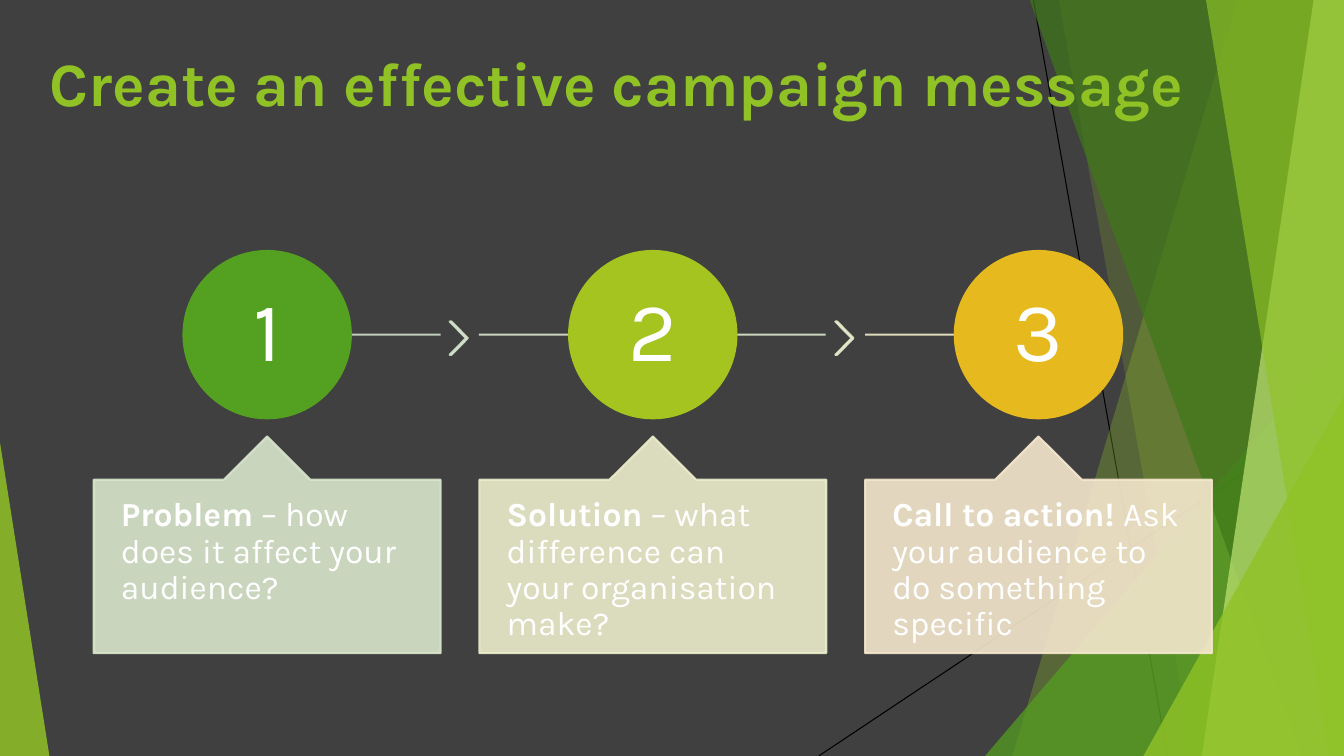
from dataclasses import dataclass

from lxml.etree import SubElement
from pptx import Presentation
from pptx.dml.color import RGBColor
from pptx.enum.shapes import MSO_CONNECTOR as Connector
from pptx.enum.shapes import MSO_SHAPE as Preset
from pptx.enum.text import MSO_ANCHOR as Anchor
from pptx.enum.text import MSO_AUTO_SIZE as AutoSize
from pptx.enum.text import PP_ALIGN as Align
from pptx.oxml.ns import qn
from pptx.util import Inches, Pt

FONT = "Karla"
COLORS = {
    "background": "404040", "black": "000000", "white": "FFFFFF",
    "lime": "90C226", "green": "54A021", "dark green": "3F7819", "pale lime": "C0E474",
    "olive": "A5C41F", "gold": "E6B91E",
    "line 1": "D1DFCD", "chevron 1": "D4E3CC", "callout 1": "D9E6CC",
    "line 2": "DEE9CC", "chevron 2": "E5ECCB", "callout 2": "ECEECC",
    "line 3": "F1EECC", "callout 3": "F5E7CD",
}
TOP, BOTTOM, RIGHT = -0.01, 7.5, 13.33
STEP_PITCH = 3.825
STEP_OPACITY = 90


@dataclass
class Facet:
    """A panel reaching the right edge, with a slanted left side."""
    top_left: float
    bottom_left: float
    color: str
    opacity: int


@dataclass
class Corner:
    """A right triangle standing on the bottom edge; apex 0 is left, 1 is right."""
    left: float
    top: float
    width: float
    apex: int
    color: str
    opacity: int


@dataclass
class Step:
    heading: str
    text: str
    color: str
    line_start: float
    line_end: float


DECORATION = [
    Facet(12.28, 10.04, "lime", 30),
    Facet(10.5, 11.83, "lime", 20),
    Corner(9.77, 3.33, 3.56, 1, "green", 72),
    Facet(10.21, 12.91, "dark green", 70),
    Facet(13.03, 11.92, "pale lime", 70),
    Facet(11.96, 13.18, "lime", 65),
    Corner(11.34, 3.93, 1.99, 1, "lime", 80),
    Corner(0, 4.39, 0.49, 0, "lime", 85),
]
STEPS = [
    Step("Problem", " – how does it affect your audience?", "green", 2.84, 4.37),
    Step("Solution", " – what difference can your organisation make?", "olive", 4.75, 8.19),
    Step("Call to action! ", "Ask your audience to do something specific", "gold", 8.58, 10.3),
]


def rgb(name: str) -> RGBColor:
    return RGBColor.from_string(COLORS[name])


def set_opacity(shape, percent: int) -> None:
    """Apply one opacity to both the fill and the line of a shape."""
    for color in list(shape.element.spPr.iter(qn("a:srgbClr"))):
        SubElement(color, qn("a:alpha"), val=str(percent * 1000))


def paint(shape, color: str, opacity: int = 100, outlined: bool = True) -> None:
    shape.shadow.inherit = False
    shape.fill.solid()
    shape.fill.fore_color.rgb = rgb(color)
    if outlined:
        shape.line.color.rgb = rgb(color)
        shape.line.width = Pt(1.5)
    else:
        shape.line.fill.background()
    if opacity < 100:
        set_opacity(shape, opacity)


def add_preset(slide, preset, left: float, top: float, width: float, height: float, *adjustments: float):
    shape = slide.shapes.add_shape(preset, Inches(left), Inches(top), Inches(width), Inches(height))
    for index, value in enumerate(adjustments):
        shape.adjustments[index] = value
    return shape


def add_line(slide, start: tuple, end: tuple, color: str, width: float, opacity: int = 100) -> None:
    line = slide.shapes.add_connector(Connector.STRAIGHT, *(Inches(value) for value in start + end))
    line.line.color.rgb = rgb(color)
    line.line.width = Pt(width)
    SubElement(line.element.spPr, qn("a:effectLst"))
    if opacity < 100:
        set_opacity(line, opacity)


def add_facet(slide, facet: Facet) -> None:
    builder = slide.shapes.build_freeform(Inches(facet.top_left), Inches(TOP))
    corners = [(RIGHT, TOP), (RIGHT, BOTTOM), (facet.bottom_left, BOTTOM)]
    builder.add_line_segments([(Inches(x), Inches(y)) for x, y in corners], close=True)
    paint(builder.convert_to_shape(), facet.color, facet.opacity, outlined=False)


def add_corner(slide, corner: Corner) -> None:
    shape = add_preset(slide, Preset.ISOSCELES_TRIANGLE, corner.left, corner.top,
                       corner.width, BOTTOM - corner.top, corner.apex)
    paint(shape, corner.color, corner.opacity, outlined=False)


def write(shape, texts: list, size: int, align, anchor, inset_x: float, inset_y: float):
    """Write one paragraph, one run per text, and return the paragraph."""
    frame = shape.text_frame
    frame.word_wrap = True
    frame.auto_size = AutoSize.NONE
    frame.vertical_anchor = anchor
    frame.margin_left = frame.margin_right = Inches(inset_x)
    frame.margin_top = frame.margin_bottom = Inches(inset_y)
    para = frame.paragraphs[0]
    para.alignment = align
    para.font.name = FONT
    para.font.size = Pt(size)
    para.font.color.rgb = rgb("white")
    for text in texts:
        para.add_run().text = text
    return para


def add_title(slide, text: str) -> None:
    title = slide.shapes.title
    title.left, title.top, title.width, title.height = map(Inches, (0.39, 0.4, 11.51, 1.45))
    para = write(title, [text], 44, Align.LEFT, Anchor.TOP, 0.1, 0.05)
    para.font.bold = True
    para.font.color.rgb = rgb("lime")
    title.element.getparent().append(title.element)  # in front of the decoration


def add_step(slide, number: int, step: Step) -> None:
    offset = (number - 1) * STEP_PITCH
    add_line(slide, (step.line_start, 3.32), (step.line_end, 3.32),
             f"line {number}", 1.5, STEP_OPACITY)
    if number < len(STEPS):
        chevron = add_preset(slide, Preset.CHEVRON, 4.46 + offset, 3.19, 0.18, 0.33, 0.9)
        paint(chevron, f"chevron {number}", STEP_OPACITY)

    circle = add_preset(slide, Preset.OVAL, 1.82 + offset, 2.49, 1.66, 1.66)
    paint(circle, step.color)
    write(circle, [str(number)], 60, Align.CENTER, Anchor.MIDDLE, 0.06, 0.06).line_spacing = 0.9

    callout = add_preset(slide, Preset.UP_ARROW_CALLOUT, 0.93 + offset, 4.33, 3.44, 2.15,
                         0.5, 0.2, 0.2, 0.8)
    paint(callout, f"callout {number}", STEP_OPACITY)
    para = write(callout, [step.heading, step.text], 24, Align.LEFT, Anchor.TOP, 0.27, 0.18)
    para.line_spacing = 0.9
    para.runs[0].font.bold = True


def main() -> None:
    deck = Presentation()
    deck.slide_width, deck.slide_height = Inches(13.33), Inches(7.5)
    slide = deck.slides.add_slide(deck.slide_layouts.get_by_name("Title Only"))
    slide.background.fill.solid()
    slide.background.fill.fore_color.rgb = rgb("background")

    add_line(slide, (10.25, 0), (11.58, BOTTOM), "black", 0.75)
    add_line(slide, (RIGHT, 4.03), (8.12, BOTTOM), "black", 0.75)
    for item in DECORATION:
        if isinstance(item, Facet):
            add_facet(slide, item)
        else:
            add_corner(slide, item)
    add_title(slide, "Create an effective campaign message")
    for number, step in enumerate(STEPS, start=1):
        add_step(slide, number, step)
    deck.save("out.pptx")


if __name__ == "__main__":
    main()
